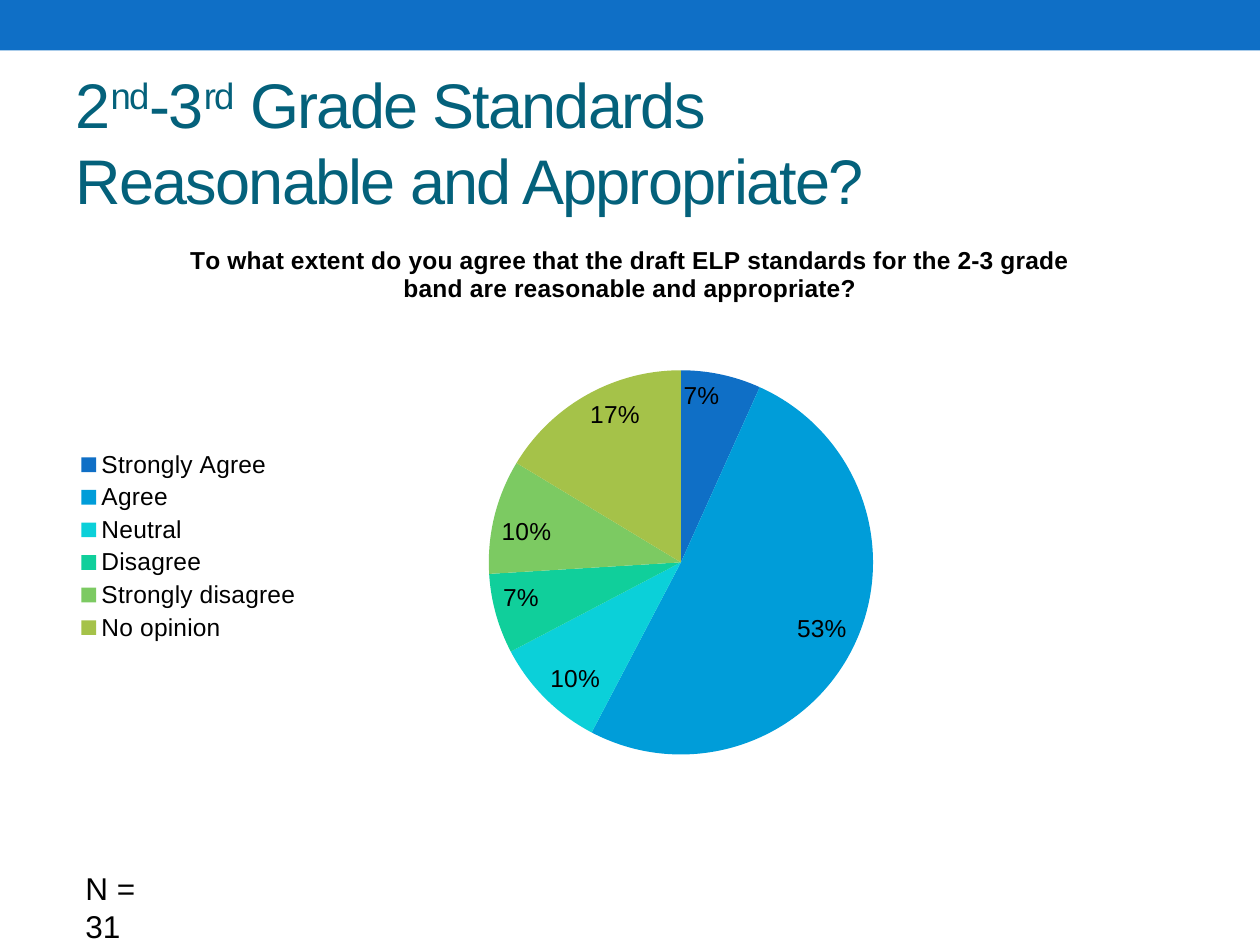
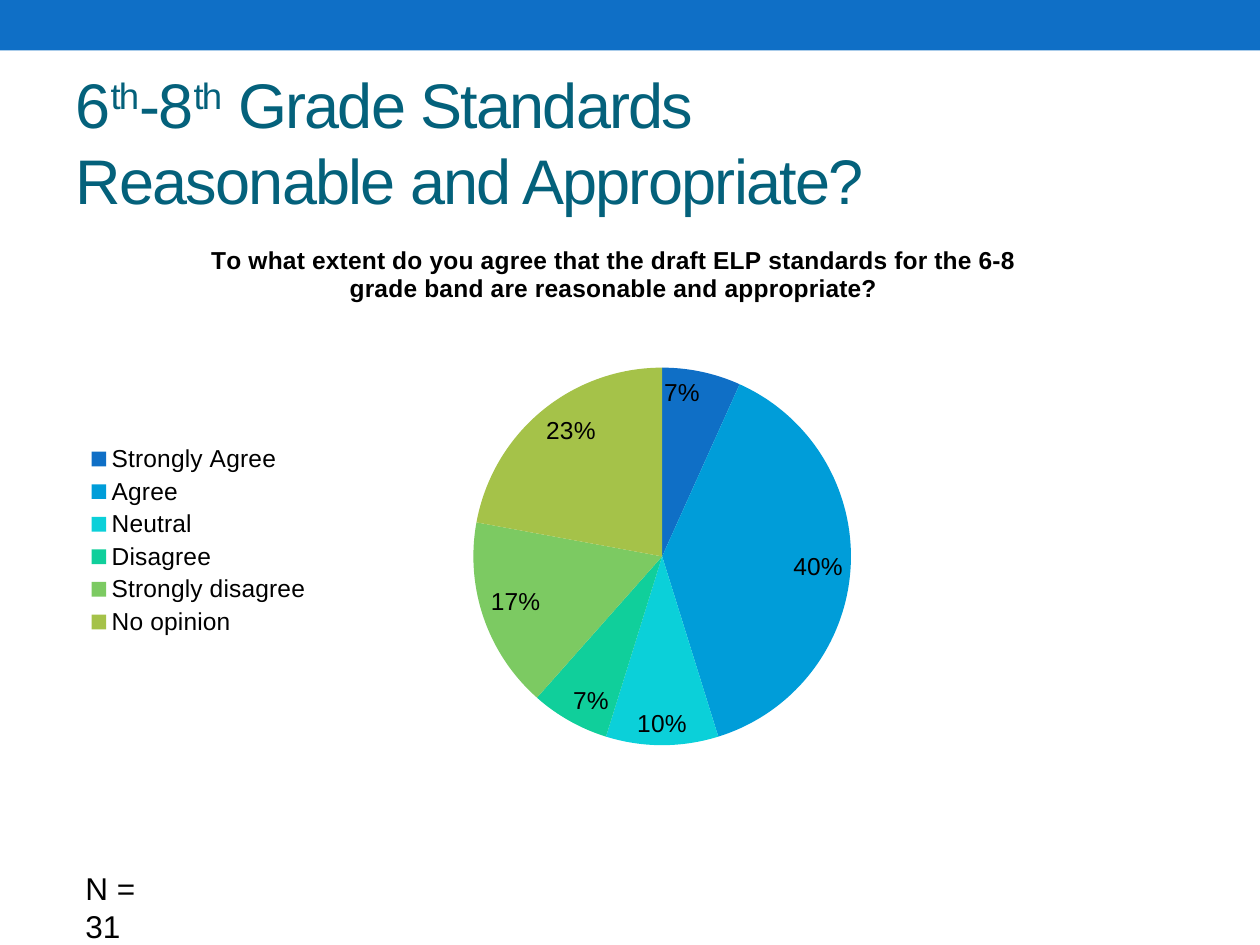
from lxml import etree
from pptx import Presentation
from pptx.chart.data import CategoryChartData
from pptx.dml.color import RGBColor
from pptx.enum.chart import XL_CHART_TYPE, XL_LABEL_POSITION, XL_LEGEND_POSITION
from pptx.enum.shapes import MSO_SHAPE
from pptx.enum.text import MSO_ANCHOR, MSO_AUTO_SIZE, PP_ALIGN
from pptx.oxml.ns import qn
from pptx.util import Inches, Pt

PIE = XL_CHART_TYPE.PIE
LEFT = XL_LEGEND_POSITION.LEFT
INSIDE = XL_LABEL_POSITION.INSIDE_END
RECT = MSO_SHAPE.RECTANGLE

FONT = "Arial"
BLUE = RGBColor(0x0F, 0x6F, 0xC6)
TEAL = RGBColor(0x04, 0x61, 0x7B)
BLACK = RGBColor(0, 0, 0)
SLICES = [
    BLUE,
    RGBColor(0x00, 0x9D, 0xD9),
    RGBColor(0x0B, 0xD0, 0xD9),
    RGBColor(0x10, 0xCF, 0x9B),
    RGBColor(0x7C, 0xCA, 0x62),
    RGBColor(0xA5, 0xC2, 0x49),
]
ANSWERS = ["Strongly Agree", "Agree", "Neutral", "Disagree",
           "Strongly disagree", "No opinion"]
PLOT = {"layoutTarget": "inner", "xMode": "edge", "yMode": "edge",
        "x": 0.11, "y": 0.23, "w": 0.87, "h": 0.59}

# Per slide: grades with their ordinals, chart box, share of each answer
BANDS = [
    (("2", "nd", "3", "rd"), (0.5, 1.75, 9, 5.17),
     (0.07, 0.53, 0.10, 0.07, 0.10, 0.17)),
    (("6", "th", "8", "th"), (0.58, 1.75, 8.58, 5.08),
     (0.07, 0.40, 0.10, 0.07, 0.17, 0.23)),
]


def style(font, size, color, bold=False):
    font.name = FONT
    font.size = Pt(size)
    font.color.rgb = color
    font.bold = bold


def place(plot_area):
    for old in plot_area.findall(qn("c:layout")):
        plot_area.remove(old)
    layout = etree.Element(qn("c:layout"))
    manual = etree.SubElement(layout, qn("c:manualLayout"))
    for tag, val in PLOT.items():
        etree.SubElement(manual, qn("c:" + tag)).set("val", str(val))
    plot_area.insert(0, layout)


prs = Presentation()
prs.slide_width = Inches(10)
prs.slide_height = Inches(7.5)

for (low, low_end, high, high_end), box, shares in BANDS:
    slide = prs.slides.add_slide(prs.slide_layouts[5])

    # Top band
    band = slide.shapes.add_shape(RECT, 0, 0, prs.slide_width, Inches(0.4))
    band.shadow.inherit = False
    band.fill.solid()
    band.fill.fore_color.rgb = BLUE
    band.line.fill.background()

    # Title with raised ordinals
    title = slide.shapes.title
    title.left, title.top = Inches(0.5), Inches(0.58)
    title.width, title.height = Inches(9), Inches(1.08)
    frame = title.text_frame
    frame.word_wrap = True
    frame.auto_size = MSO_AUTO_SIZE.NONE
    frame.vertical_anchor = MSO_ANCHOR.MIDDLE
    para = frame.paragraphs[0]
    para.alignment = PP_ALIGN.LEFT
    for part in (low, low_end, "-" + high, high_end, " Grade Standards",
                 "Reasonable and Appropriate?"):
        if part.startswith("Reasonable"):
            para.add_line_break()
        run = para.add_run()
        run.text = part
        style(run.font, 36, TEAL)
        props = run.font._element
        props.set("spc", "-100")
        if part in (low_end, high_end):
            props.set("baseline", "30000")

    # Pie chart
    data = CategoryChartData(number_format="0%")
    data.categories = ANSWERS
    data.add_series("Series 1", shares)
    chart = slide.shapes.add_chart(
        PIE, *[Inches(side) for side in box], data).chart
    style(chart.font, 10, BLACK)
    place(chart._chartSpace.chart.plotArea)

    chart.has_title = True
    head = chart.chart_title
    head.include_in_layout = False
    head.text_frame.text = (
        "To what extent do you agree that the draft ELP standards for the "
        f"{low}-{high} grade band are reasonable and appropriate?")
    style(head.text_frame.paragraphs[0].runs[0].font, 14, BLACK, True)

    chart.has_legend = True
    chart.legend.position = LEFT
    chart.legend.include_in_layout = False
    style(chart.legend.font, 14, BLACK)

    pie = chart.plots[0]
    pie.vary_by_categories = True
    pie.has_data_labels = True
    labels = pie.data_labels
    labels.show_value = True
    labels.show_percentage = False
    labels.number_format = "0%"
    labels.number_format_is_linked = False
    labels.position = INSIDE
    style(labels.font, 14, BLACK)
    for i, color in enumerate(SLICES):
        fill = pie.series[0].points[i].format.fill
        fill.solid()
        fill.fore_color.rgb = color

    # Sample size
    note = slide.shapes.add_textbox(
        Inches(0.58), Inches(6.85), Inches(0.86), Inches(0.4))
    note.text_frame.word_wrap = True
    note.text_frame.text = "N = 31"
    style(note.text_frame.paragraphs[0].runs[0].font, 18, BLACK)

prs.save("out.pptx")
